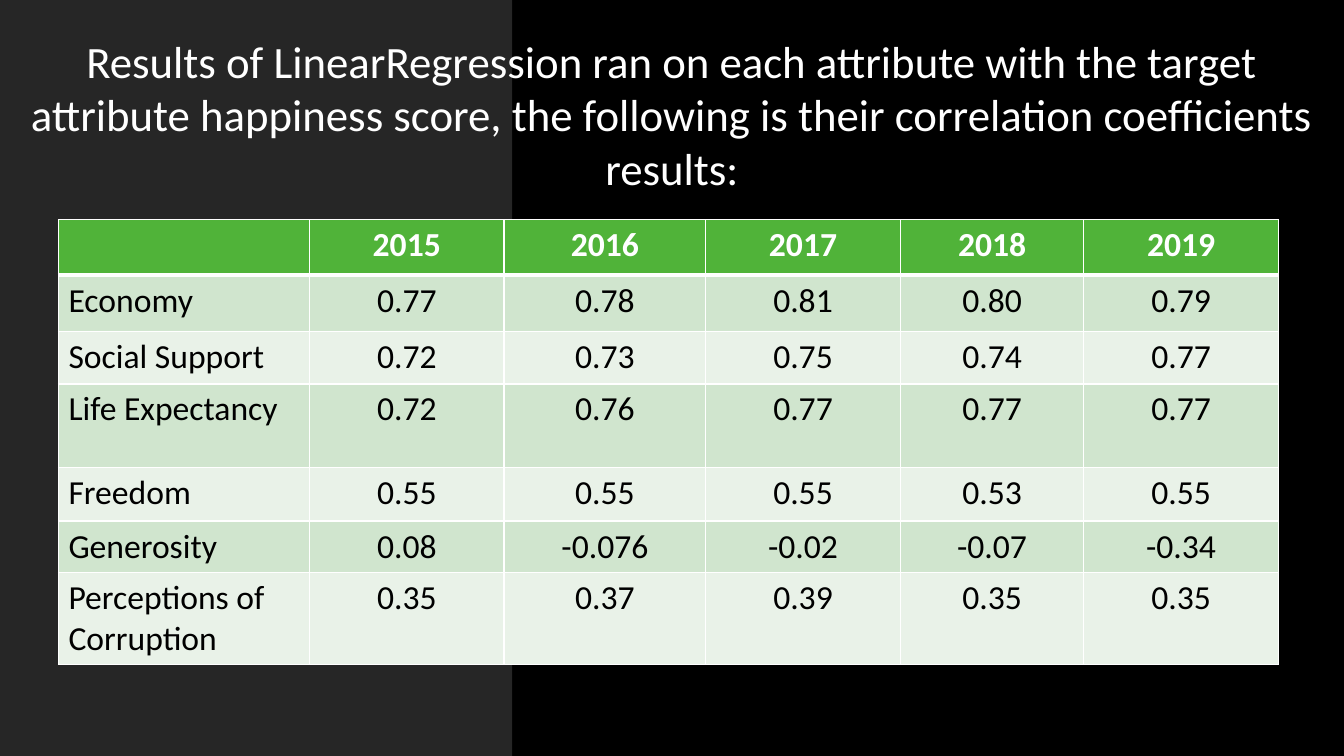
from pptx import Presentation
from pptx.dml.color import RGBColor
from pptx.enum.shapes import MSO_SHAPE
from pptx.enum.text import MSO_ANCHOR, MSO_AUTO_SIZE, PP_ALIGN
from pptx.oxml import parse_xml
from pptx.oxml.ns import nsdecls
from pptx.util import Inches, Pt

BLACK = RGBColor(0x00, 0x00, 0x00)
WHITE = RGBColor(0xFF, 0xFF, 0xFF)
DARK_GRAY = RGBColor(0x26, 0x26, 0x26)
GREEN = RGBColor(0x50, 0xB3, 0x39)
BAND_DARK = RGBColor(0xD0, 0xE5, 0xCE)
BAND_LIGHT = RGBColor(0xE9, 0xF2, 0xE8)
FONT = "Calibri"

TITLE = ("Results of LinearRegression ran on each attribute with the target "
         "attribute happiness score, the following is their correlation "
         "coefficients results:")
COL_WIDTHS = [2.49, 1.93, 2, 1.93, 1.82, 1.93]
ROW_HEIGHTS = [0.55, 0.56, 0.52, 0.83, 0.53, 0.47, 0.85]
ROWS = [
    ["", "2015", "2016", "2017", "2018", "2019"],
    ["Economy", "0.77", "0.78", "0.81", "0.80", "0.79"],
    ["Social Support", "0.72", "0.73", "0.75", "0.74", "0.77"],
    ["Life Expectancy", "0.72", "0.76", "0.77", "0.77", "0.77"],
    ["Freedom", "0.55", "0.55", "0.55", "0.53", "0.55"],
    ["Generosity", "0.08", "-0.076", "-0.02", "-0.07", "-0.34"],
    ["Perceptions of Corruption", "0.35", "0.37", "0.39", "0.35", "0.35"],
]


def add_border(cell, side, points):
    cell._tc.get_or_add_tcPr().append(parse_xml(
        f'<a:ln{side} {nsdecls("a")} w="{Pt(points)}"><a:solidFill>'
        f'<a:srgbClr val="{WHITE}"/></a:solidFill></a:ln{side}>'))


def format_text(p, size, color, bold, align):
    p.alignment = align
    for r in p.runs:
        r.font.name = FONT
        r.font.size = Pt(size)
        r.font.bold = bold
        r.font.color.rgb = color


prs = Presentation()
prs.slide_width = Inches(13.33)
prs.slide_height = Inches(7.5)
slide = prs.slides.add_slide(prs.slide_layouts[5])

# Background: black with a dark gray panel on the left
slide.background.fill.solid()
slide.background.fill.fore_color.rgb = BLACK
for width, color in [(13.33, BLACK), (5.08, DARK_GRAY)]:
    sp = slide.shapes.add_shape(MSO_SHAPE.RECTANGLE, 0, 0, Inches(width), Inches(7.5))
    sp.shadow.inherit = False
    sp.fill.solid()
    sp.fill.fore_color.rgb = color
    sp.line.fill.background()

# Table of correlation coefficients
table = slide.shapes.add_table(
    len(ROWS), len(COL_WIDTHS), Inches(0.58), Inches(2.18),
    Inches(sum(COL_WIDTHS)), Inches(sum(ROW_HEIGHTS))).table
for column, width in zip(table.columns, COL_WIDTHS):
    column.width = Inches(width)
for i, (row, height) in enumerate(zip(ROWS, ROW_HEIGHTS)):
    table.rows[i].height = Inches(height)
    header = i == 0
    fill = GREEN if header else BAND_DARK if i % 2 else BAND_LIGHT
    for j, value in enumerate(row):
        cell = table.cell(i, j)
        for side in "LRTB":
            under_header = (i, side) in [(0, "B"), (1, "T")]
            add_border(cell, side, 3 if under_header else 1)
        cell.fill.solid()
        cell.fill.fore_color.rgb = fill
        p = cell.text_frame.paragraphs[0]
        p.text = value
        format_text(p, 24, WHITE if header else BLACK, header,
                    PP_ALIGN.CENTER if j else PP_ALIGN.LEFT)

# Title, brought in front of the panels
title = slide.shapes.title
title.left, title.top = 0, Inches(0.28)
title.width, title.height = Inches(13.33), Inches(1.72)
tf = title.text_frame
tf.text = TITLE
tf.word_wrap = True
tf.auto_size = MSO_AUTO_SIZE.NONE
tf.vertical_anchor = MSO_ANCHOR.TOP
format_text(tf.paragraphs[0], 32, WHITE, False, PP_ALIGN.CENTER)
slide.shapes._spTree.append(title._element)

prs.save("out.pptx")
